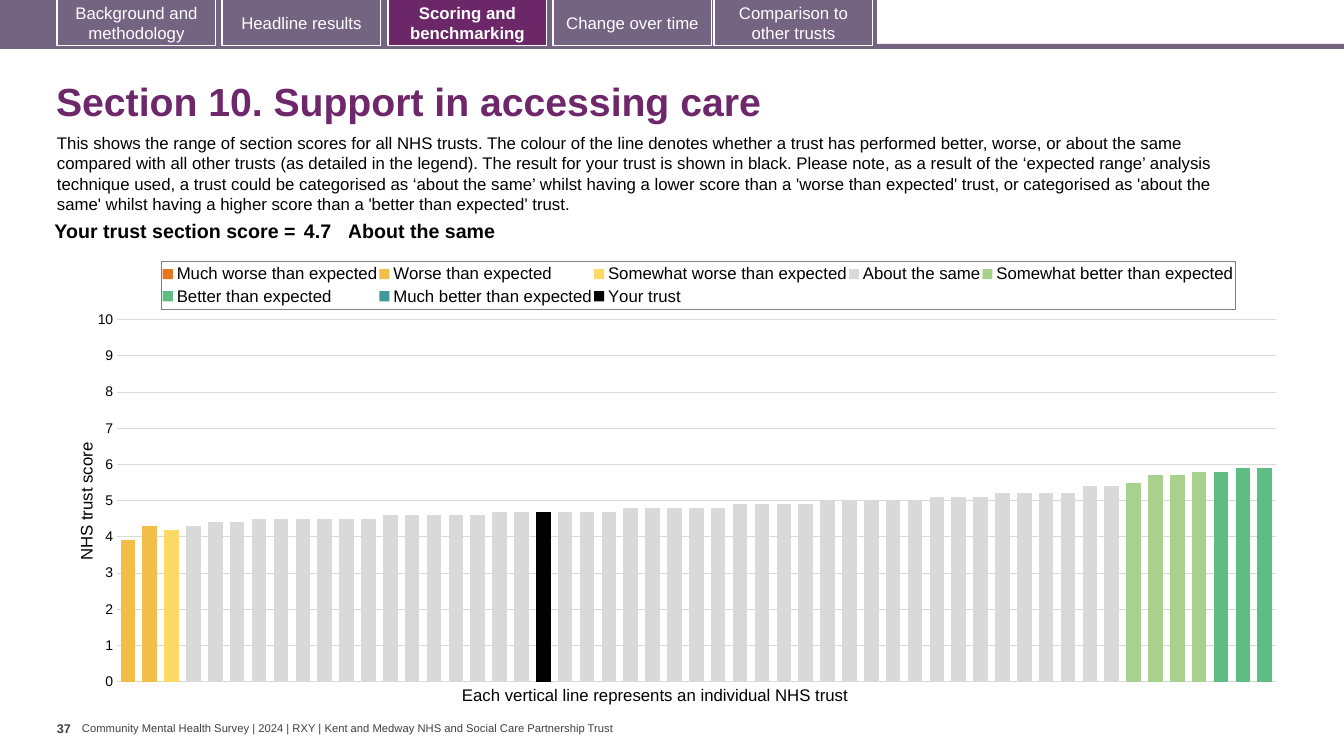
import copy

import lxml.etree
import pptx
import pptx.chart.data
import pptx.dml.color
import pptx.enum.chart
import pptx.enum.shapes
import pptx.enum.text
import pptx.oxml.ns
import pptx.util

MAUVE, PLUM, WHITE, BLACK, GREY = "756382", "6B2768", "FFFFFF", "000000", "404040"

TABS = [  # label, left
    ("Background and methodology", 57),
    ("Headline results", 222),
    ("Scoring and benchmarking", 388),
    ("Change over time", 553),
    ("Comparison to other trusts", 714),
]
CURRENT_TAB = "Scoring and benchmarking"
TITLE = "Section 10. Support in accessing care"
INTRO = (
    "This shows the range of section scores for all NHS trusts. The colour of the line "
    "denotes whether a trust has performed better, worse, or about the same compared with "
    "all other trusts (as detailed in the legend). The result for your trust is shown in "
    "black. Please note, as a result of the ‘expected range’ analysis technique used, a "
    "trust could be categorised as ‘about the same’ whilst having a lower score than a "
    "'worse than expected' trust, or categorised as 'about the same' whilst having a higher "
    "score than a 'better than expected' trust."
)
SCORE_ROW = [("Your trust section score =", 265), ("4.7", 48), ("About the same", 866)]
SCORE_AXIS = "NHS trust score"
TRUST_AXIS = "Each vertical line represents an individual NHS trust"
PAGE = "37"
FOOTER = ("Community Mental Health Survey | 2024 | RXY | "
          "Kent and Medway NHS and Social Care Partnership Trust")

TRUST_COUNT = 53
BANDS = [  # name, colour, trusts before the first score, scores
    ("Much worse than expected", "E87722", 0, []),
    ("Worse than expected", "F1BE48", 0, [3.9, 4.3]),
    ("Somewhat worse than expected", "FFD966", 2, [4.2]),
    ("About the same", "D9D9D9", 3,
     [4.3] + [4.4] * 2 + [4.5] * 6 + [4.6] * 5 + [4.7] * 6 + [4.8] * 5 + [4.9] * 4
     + [5] * 5 + [5.1] * 3 + [5.2] * 4 + [5.4] * 2),
    ("Somewhat better than expected", "A9D18E", 46, [5.5, 5.7, 5.7, 5.8]),
    ("Better than expected", "5FBD83", 50, [5.8, 5.9, 5.9]),
    ("Much better than expected", "419999", 0, []),
    ("Your trust", BLACK, 19, [4.7]),
]

ALIGN = pptx.enum.text.PP_ALIGN
MIDDLE = pptx.enum.text.MSO_ANCHOR.MIDDLE
qn = pptx.oxml.ns.qn


def px(length):
    return pptx.util.Emu(round(length * 914400 / 100.8))


def colour(value):
    return pptx.dml.color.RGBColor.from_string(value)


def style(font, size, value, bold=False):
    font.name, font.size, font.bold = "Arial", pptx.util.Pt(size), bold
    font.color.rgb = colour(value)


def write(frame, text, size, value, bold=False, align=ALIGN.LEFT):
    paragraph = frame.paragraphs[0]
    paragraph.alignment = align
    run = paragraph.add_run()
    run.text = text
    style(run.font, size, value, bold)


def add_text(box, text, size, value, bold=False, wrap=False, inset=10, anchor=None):
    frame = slide.shapes.add_textbox(*map(px, box)).text_frame
    frame.word_wrap = wrap
    frame.margin_left = frame.margin_right = px(inset)
    if anchor:
        frame.vertical_anchor = anchor
        frame.margin_top = frame.margin_bottom = 0
    write(frame, text, size, value, bold)


def add_bar(box, fill):
    bar = slide.shapes.add_shape(pptx.enum.shapes.MSO_SHAPE.RECTANGLE, *map(px, box))
    bar.shadow.inherit = False
    bar.fill.solid()
    bar.fill.fore_color.rgb = colour(fill)
    bar.line.fill.background()
    return bar


def add_tab(label, left):
    current = label == CURRENT_TAB
    tab = add_bar((left, -1, 159, 47), PLUM if current else MAUVE)
    tab.line.color.rgb = colour(WHITE)
    tab.line.width = pptx.util.Pt(0.75)
    tab.text_frame.word_wrap = True
    tab.text_frame.vertical_anchor = MIDDLE
    write(tab.text_frame, label, 12, WHITE, current, ALIGN.CENTER)


def place(parent, index, inner=False, **fractions):
    """Give a chart part a fixed place, in fractions of the chart."""
    for old in parent.findall(qn("c:layout")):
        parent.remove(old)
    layout = lxml.etree.Element(qn("c:layout"))
    manual = lxml.etree.SubElement(layout, qn("c:manualLayout"))
    settings = {"layoutTarget": "inner"} if inner else {}
    settings.update(xMode="edge", yMode="edge", **fractions)
    for name, value in settings.items():
        lxml.etree.SubElement(manual, qn("c:" + name)).set("val", str(value))
    parent.insert(index, layout)


def move_last_series_to_right_axis(plot_area):
    bars = plot_area.find(qn("c:barChart"))
    right_bars = copy.deepcopy(bars)
    bars.remove(bars.findall(qn("c:ser"))[-1])
    for series in right_bars.findall(qn("c:ser"))[:-1]:
        right_bars.remove(series)
    bars.addnext(right_bars)

    trusts, scores = plot_area.find(qn("c:catAx")), plot_area.find(qn("c:valAx"))
    right_trusts, right_scores = copy.deepcopy(trusts), copy.deepcopy(scores)
    scores.addnext(right_scores)
    right_scores.addnext(right_trusts)
    for name in ("c:majorGridlines", "c:title"):
        right_scores.remove(right_scores.find(qn(name)))
    right_scores.find(qn("c:axPos")).set("val", "r")
    right_scores.find(qn("c:tickLblPos")).set("val", "none")
    right_scores.find(qn("c:crosses")).set("val", "max")

    ids = [axis.get("val") for axis in bars.findall(qn("c:axId"))]
    new_ids = dict(zip(ids, ("5001", "5002")))
    for part in (right_bars, right_trusts, right_scores):
        for tag in ("c:axId", "c:crossAx"):
            for axis in part.findall(qn(tag)):
                axis.set("val", new_ids[axis.get("val")])


def add_score_chart():
    data = pptx.chart.data.CategoryChartData()
    data.categories = [str(number + 1) for number in range(TRUST_COUNT)]
    for name, _, before, scores in BANDS:
        after = TRUST_COUNT - before - len(scores)
        data.add_series(name, [None] * before + scores + [None] * after)
    chart = slide.shapes.add_chart(pptx.enum.chart.XL_CHART_TYPE.COLUMN_CLUSTERED,
                                   *map(px, (68, 249, 1225, 448)), data).chart
    chart.has_title = False
    style(chart.font, 10, BLACK)
    bars = chart.plots[0]
    bars.gap_width, bars.overlap, bars.vary_by_categories = 50, 100, False
    for series, (_, fill, _, _) in zip(bars.series, BANDS):
        series.format.fill.solid()
        series.format.fill.fore_color.rgb = colour(fill)

    chart.category_axis.visible = False
    axis = chart.value_axis
    axis.minimum_scale, axis.maximum_scale, axis.major_unit = 0, 10, 1
    axis.major_tick_mark = pptx.enum.chart.XL_TICK_MARK.NONE
    axis.format.line.fill.background()
    axis.major_gridlines.format.line.color.rgb = colour("D9D9D9")
    axis.major_gridlines.format.line.width = pptx.util.Pt(0.75)
    style(axis.tick_labels.font, 10, BLACK)
    write(axis.axis_title.text_frame, SCORE_AXIS, 12, BLACK)
    place(axis.axis_title._element, 1, x=0.004, y=0.425)

    chart.has_legend = True
    legend = chart.legend
    legend.position = pptx.enum.chart.XL_LEGEND_POSITION.TOP
    legend.include_in_layout = False
    style(legend.font, 12, BLACK)
    place(legend._element, 1, x=0.076, y=0.027, w=0.877, h=0.108)
    border = lxml.etree.Element(qn("c:spPr"))
    line = lxml.etree.SubElement(border, qn("a:ln"), w="9525")
    fill = lxml.etree.SubElement(line, qn("a:solidFill"))
    lxml.etree.SubElement(fill, qn("a:srgbClr"), val="7F7F7F")
    legend._element.find(qn("c:txPr")).addprevious(border)

    plot_area = chart._chartSpace.find(".//" + qn("c:plotArea"))
    place(plot_area, 0, inner=True, x=0.04, y=0.158, w=0.946, h=0.808)
    move_last_series_to_right_axis(plot_area)


def add_score_row():
    width = sum(column for _, column in SCORE_ROW)
    table = slide.shapes.add_table(1, len(SCORE_ROW), *map(px, (35, 217, width, 31))).table
    table.first_row = table.horz_banding = False
    for index, (text, column) in enumerate(SCORE_ROW):
        table.columns[index].width = px(column)
        cell = table.cell(0, index)
        cell.fill.background()
        cell.margin_top = cell.margin_bottom = px(4)
        cell.margin_left = cell.margin_right = px(0 if index == 2 else 4)
        write(cell.text_frame, text, 14, BLACK, True, ALIGN.LEFT if index else ALIGN.RIGHT)


deck = pptx.Presentation()
deck.slide_width, deck.slide_height = px(1344), px(756)
slide = deck.slides.add_slide(deck.slide_layouts[5])

add_bar((0, 44, 1344, 5), MAUVE)
add_bar((0, 0, 877, 47), MAUVE)
for label, left in TABS:
    add_tab(label, left)

title = slide.shapes.title
title.left, title.top, title.width, title.height = map(px, (46, 67, 1259, 73))
title.text_frame.vertical_anchor = MIDDLE
title.text_frame.paragraphs[0].line_spacing = 0.9
write(title.text_frame, TITLE, 28, "6D276A", True)

add_text((47, 128, 1223, 92), INTRO, 12, BLACK, wrap=True)
add_score_chart()
add_text((452, 680, 414, 30), TRUST_AXIS, 12, BLACK)
add_score_row()
add_text((57, 716, 25, 40), PAGE, 9, GREY, bold=True, inset=0)
add_text((82, 722, 538, 13), FOOTER, 8, GREY, inset=0, anchor=MIDDLE)

deck.save("out.pptx")
